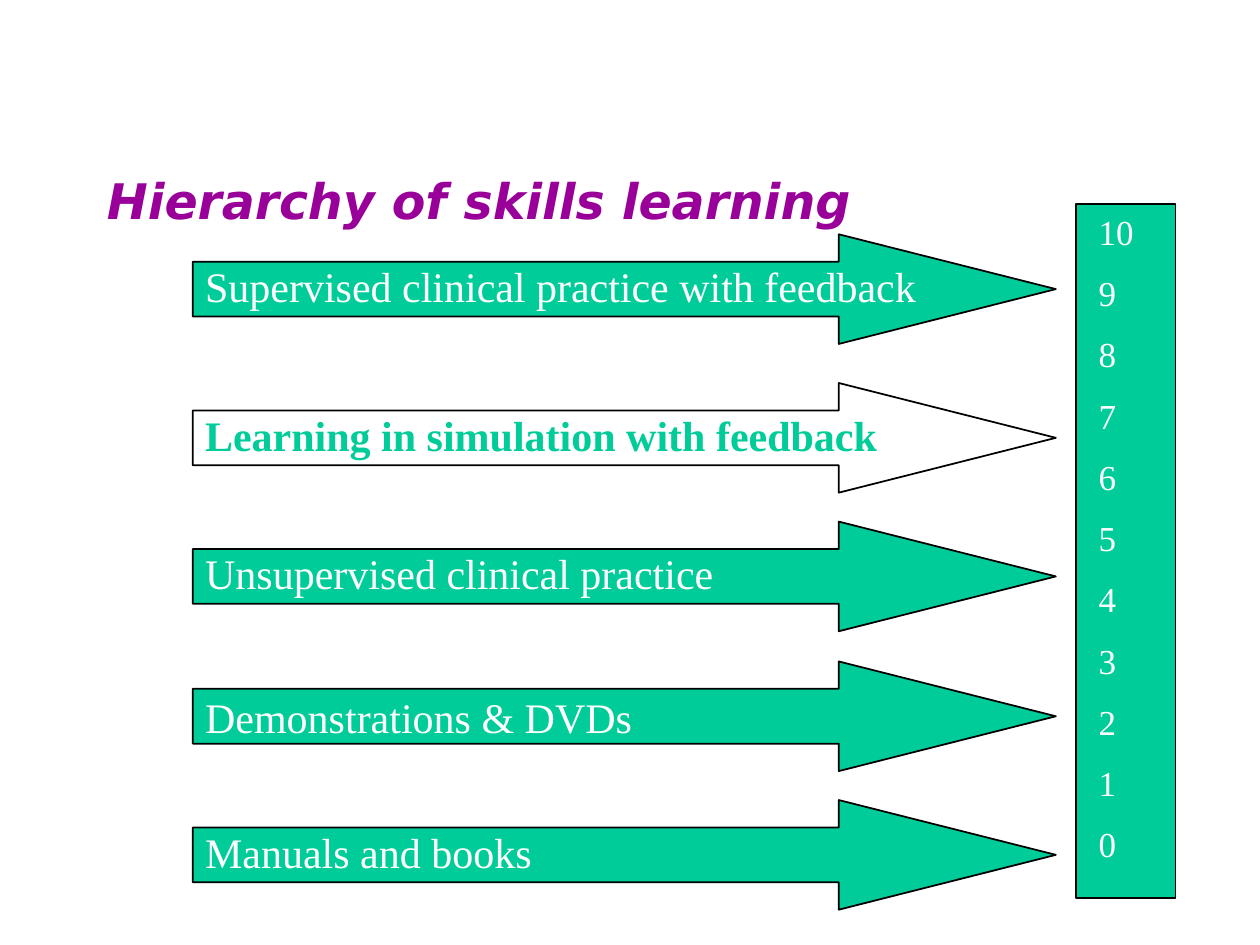
from pptx import Presentation
from pptx.dml.color import RGBColor
from pptx.enum.shapes import MSO_SHAPE
from pptx.enum.text import MSO_ANCHOR
from pptx.util import Inches, Pt

RECTANGLE = MSO_SHAPE.RECTANGLE
RIGHT_ARROW = MSO_SHAPE.RIGHT_ARROW
TOP, MIDDLE = MSO_ANCHOR.TOP, MSO_ANCHOR.MIDDLE

COLORS = {"title": "990099", "green": "00CC99", "white": "FFFFFF", "black": "000000"}
TITLE_FONT, BODY_FONT = "DejaVu Sans", "Times New Roman"


class SkillsSlide:
    def __init__(self, slide):
        self.slide = slide

    def color(self, name):
        return RGBColor.from_string(COLORS[name])

    def shape(self, kind, left, top, width, height, fill):
        shape = self.slide.shapes.add_shape(
            kind, Inches(left), Inches(top), Inches(width), Inches(height))
        shape.shadow.inherit = False
        shape.fill.solid()
        shape.fill.fore_color.rgb = self.color(fill)
        shape.line.color.rgb = self.color("black")
        shape.line.width = Pt(1)
        return shape

    def arrow(self, left, top, width, height, fill):
        arrow = self.shape(RIGHT_ARROW, left, top, width, height, fill)
        arrow.adjustments[0] = 0.5
        arrow.adjustments[1] = 1.98

    def text(self, lines, left, top, width, height, size, color, font=BODY_FONT,
             bold=False, italic=False, anchor=TOP, gap=0):
        box = self.slide.shapes.add_textbox(
            Inches(left), Inches(top), Inches(width), Inches(height))
        frame = box.text_frame
        frame.word_wrap = True
        frame.vertical_anchor = anchor
        for index, line in enumerate(lines):
            paragraph = frame.add_paragraph() if index else frame.paragraphs[0]
            if index:
                paragraph.space_before = Pt(gap)
            run = paragraph.add_run()
            run.text = line
            run.font.name = font
            run.font.size = Pt(size)
            run.font.bold = bold
            run.font.italic = italic
            run.font.color.rgb = self.color(color)


def main():
    deck = Presentation()
    deck.slide_width, deck.slide_height = Inches(10), Inches(7.5)
    page = SkillsSlide(deck.slides.add_slide(deck.slide_layouts[6]))

    # Title
    page.text(["Hierarchy of skills learning"], 0.75, 1.25, 8.5, 0.67, 28, "title",
              font=TITLE_FONT, bold=True, italic=True, anchor=MIDDLE)

    # Score scale, from 10 down to 0
    page.shape(RECTANGLE, 8.54, 1.62, 0.79, 5.51, "green")
    scores = [str(score) for score in range(10, -1, -1)]
    page.text(scores, 8.62, 1.62, 0.55, 5.43, 20, "white", gap=11)

    # Learning methods: label, arrow top, label top, highlighted
    methods = [
        ("Supervised clinical practice with feedback", 1.86, 2.02, False),
        ("Learning in simulation with feedback", 3.04, 3.20, True),
        ("Unsupervised clinical practice", 4.14, 4.30, False),
        ("Demonstrations & DVDs", 5.25, 5.44, False),
        ("Manuals and books", 6.35, 6.51, False),
    ]
    for label, arrow_top, label_top, highlighted in methods:
        fill, ink = ("white", "green") if highlighted else ("green", "white")
        page.arrow(1.53, arrow_top, 6.85, 0.87, fill)
        page.text([label], 1.53, label_top, 6.06, 0.5, 24, ink, bold=highlighted)

    deck.save("out.pptx")


if __name__ == "__main__":
    main()
